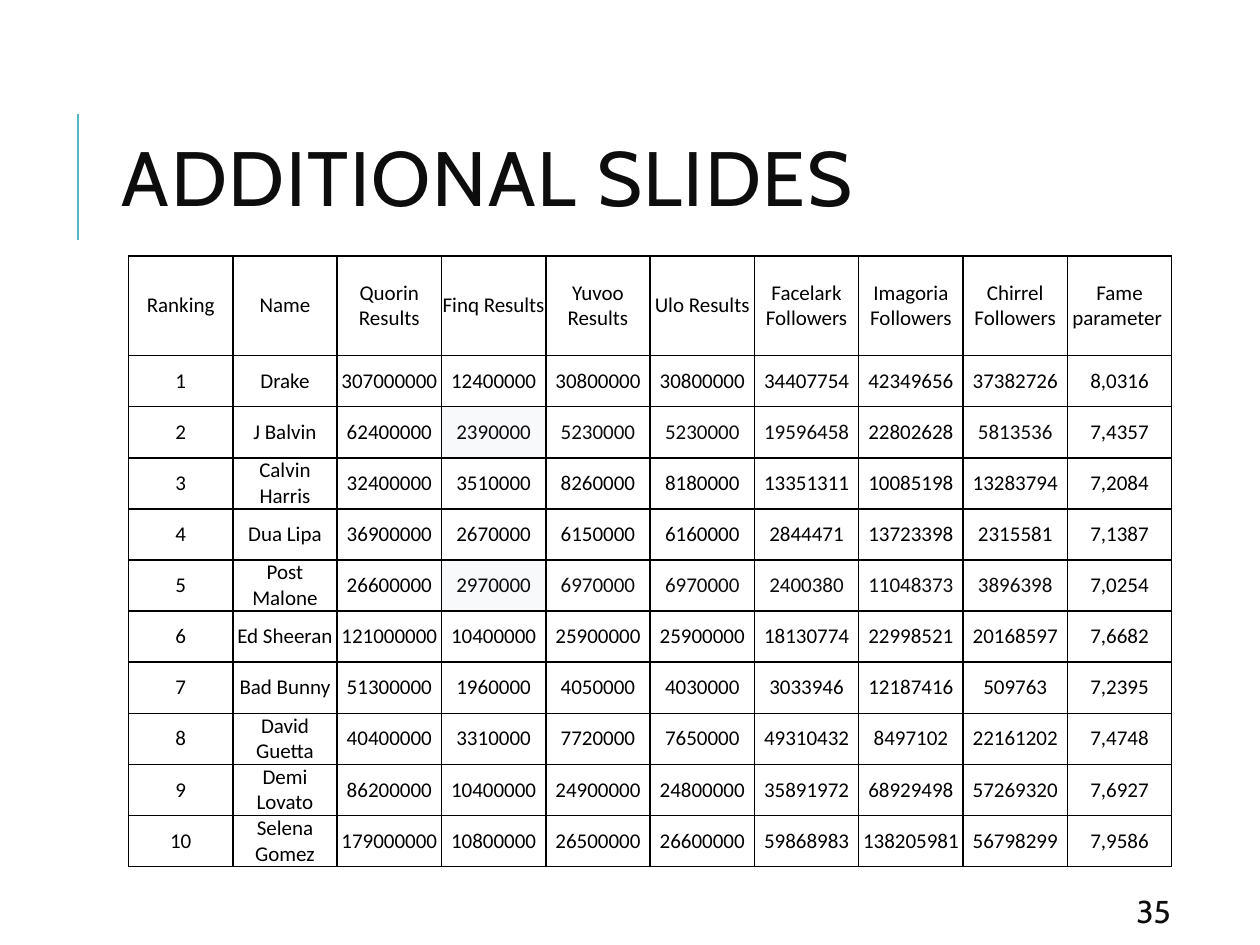
"""Build the additional slide that ranks artists by their fame parameter."""
import dataclasses

import lxml.etree
import pptx
import pptx.dml.color
import pptx.enum.shapes
import pptx.enum.text
import pptx.oxml.ns
import pptx.util

Cm = pptx.util.Cm
Pt = pptx.util.Pt
qn = pptx.oxml.ns.qn


@dataclasses.dataclass(frozen=True)
class Theme:
    accent: str = "58B6C0"
    dark: str = "0D0D0D"
    black: str = "000000"
    highlight: str = "F8F9FA"
    heading_font: str = "Cabin"
    table_font: str = "Calibri"
    title_size: int = 44
    number_size: int = 18
    table_size: int = 12


theme = Theme()


def style_font(paragraph, name, size, color):
    paragraph.font.name = name
    paragraph.font.size = Pt(size)
    paragraph.font.color.rgb = pptx.dml.color.RGBColor.from_string(color)


def add_heading_text(slide, text, left, top, width, height, size):
    shape = slide.shapes.add_textbox(Cm(left), Cm(top), Cm(width), Cm(height))
    frame = shape.text_frame
    frame.word_wrap = True
    frame.vertical_anchor = pptx.enum.text.MSO_ANCHOR.MIDDLE
    frame.margin_left = frame.margin_right = Cm(0.33)
    frame.margin_top = frame.margin_bottom = Cm(0.18)
    paragraph = frame.paragraphs[0]
    paragraph.text = text
    style_font(paragraph, theme.heading_font, size, theme.dark)
    return paragraph


headers = [
    "Ranking", "Name", "Quorin Results", "Finq Results", "Yuvoo Results", "Ulo Results",
    "Facelark Followers", "Imagoria Followers", "Chirrel Followers", "Fame parameter ",
]
artists = [
    ["Drake", 307000000, 12400000, 30800000, 30800000, 34407754, 42349656, 37382726, "8,0316"],
    ["J Balvin", 62400000, 2390000, 5230000, 5230000, 19596458, 22802628, 5813536, "7,4357"],
    ["Calvin Harris", 32400000, 3510000, 8260000, 8180000, 13351311, 10085198, 13283794, "7,2084"],
    ["Dua Lipa", 36900000, 2670000, 6150000, 6160000, 2844471, 13723398, 2315581, "7,1387"],
    ["Post Malone", 26600000, 2970000, 6970000, 6970000, 2400380, 11048373, 3896398, "7,0254"],
    ["Ed Sheeran", 121000000, 10400000, 25900000, 25900000, 18130774, 22998521, 20168597, "7,6682"],
    ["Bad Bunny", 51300000, 1960000, 4050000, 4030000, 3033946, 12187416, 509763, "7,2395"],
    ["David Guetta", 40400000, 3310000, 7720000, 7650000, 49310432, 8497102, 22161202, "7,4748"],
    ["Demi Lovato", 86200000, 10400000, 24900000, 24800000, 35891972, 68929498, 57269320, "7,6927"],
    ["Selena Gomez", 179000000, 10800000, 26500000, 26600000, 59868983, 138205981, 56798299, "7,9586"],
]
rows = [headers] + [[rank, *artist] for rank, artist in enumerate(artists, start=1)]
highlighted_cells = {(2, 3), (5, 3)}
dark_columns = {2: {3, 4, 5, 6, 8}, 5: {3, 4, 5, 6, 7, 8}}

presentation = pptx.Presentation()
presentation.slide_width = Cm(25.4)
presentation.slide_height = Cm(19.05)
slide = presentation.slides.add_slide(presentation.slide_layouts[6])

accent_line = slide.shapes.add_connector(
    pptx.enum.shapes.MSO_CONNECTOR.STRAIGHT, Cm(1.57), Cm(4.83), Cm(1.57), Cm(2.29))
accent_line.line.color.rgb = pptx.dml.color.RGBColor.from_string(theme.accent)
accent_line.line.width = Pt(1.5)
lxml.etree.SubElement(accent_line._element.spPr, qn("a:effectLst"))

title = add_heading_text(slide, "ADDITIONAL SLIDES", 2.13, 1.63, 20.24, 4.17, theme.title_size)
title.line_spacing = 0.8
title.runs[0].font._element.set("spc", "100")
add_heading_text(slide, "35", 22.58, 17.98, 2.03, 0.76, theme.number_size)

table = slide.shapes.add_table(
    len(rows), len(headers), Cm(2.59), Cm(5.16), Cm(21.03), Cm(12.31)).table
table.first_row = False
table.horz_banding = False
for row_index, values in enumerate(rows):
    table.rows[row_index].height = Cm(1.03 if row_index else 2.01)
    for column_index, value in enumerate(values):
        cell = table.cell(row_index, column_index)
        cell.margin_left = cell.margin_right = cell.margin_top = cell.margin_bottom = 0
        cell.vertical_anchor = pptx.enum.text.MSO_ANCHOR.MIDDLE
        paragraph = cell.text_frame.paragraphs[0]
        paragraph.text = str(value)
        paragraph.alignment = pptx.enum.text.PP_ALIGN.CENTER
        is_dark = column_index in dark_columns.get(row_index, ())
        style_font(paragraph, theme.table_font, theme.table_size,
                   theme.dark if is_dark else theme.black)
        properties = cell._tc.get_or_add_tcPr()
        for side in ("a:lnL", "a:lnR", "a:lnT", "a:lnB"):
            border = lxml.etree.SubElement(properties, qn(side), w=str(Pt(1)))
            border_fill = lxml.etree.SubElement(border, qn("a:solidFill"))
            lxml.etree.SubElement(border_fill, qn("a:srgbClr"), val=theme.black)
        if (row_index, column_index) in highlighted_cells:
            cell.fill.solid()
            cell.fill.fore_color.rgb = pptx.dml.color.RGBColor.from_string(theme.highlight)
        else:
            cell.fill.background()

presentation.save("out.pptx")
